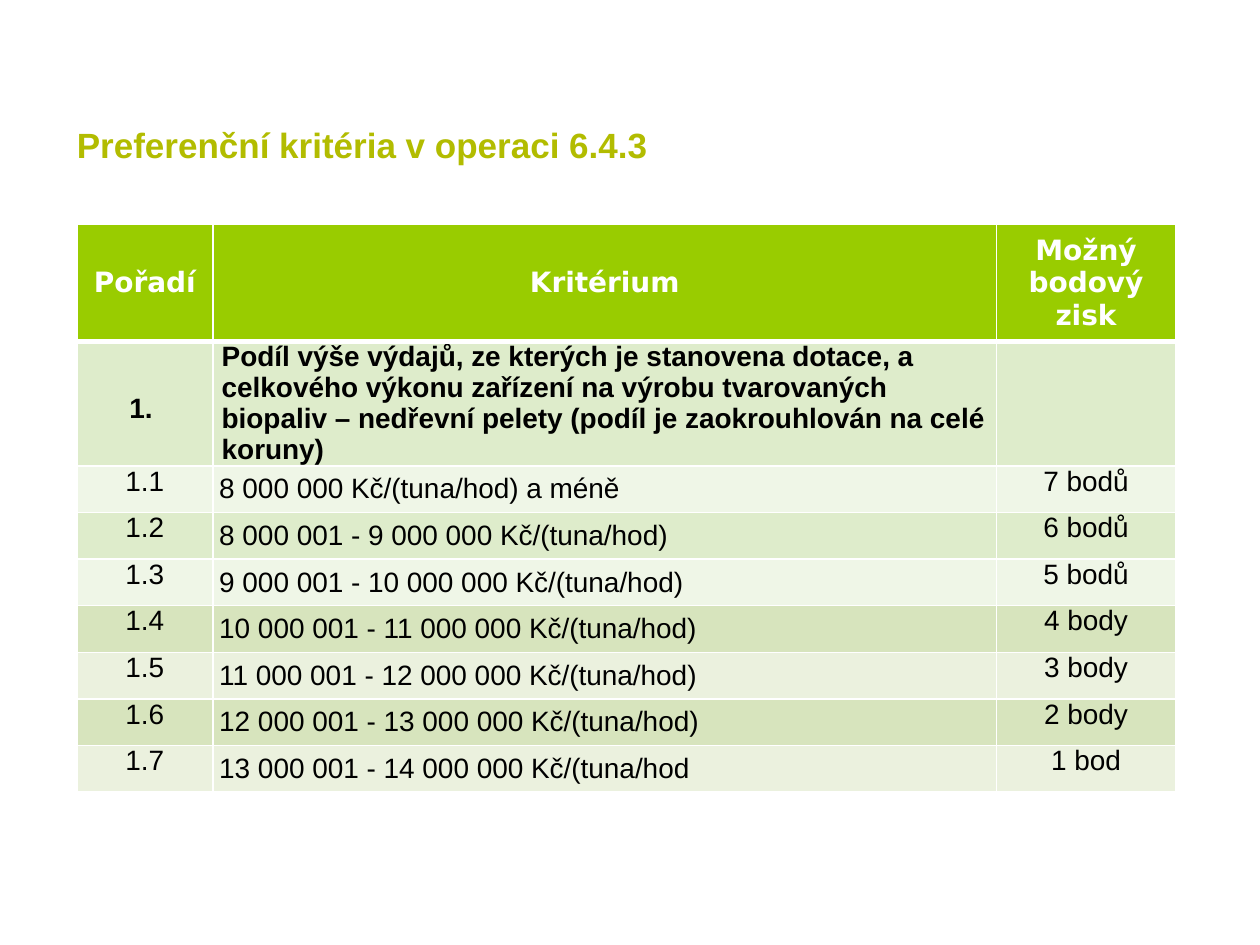
from lxml.etree import SubElement
from pptx import Presentation
from pptx.dml.color import RGBColor
from pptx.enum.text import MSO_ANCHOR as Anchor, PP_ALIGN as Align
from pptx.oxml.ns import qn
from pptx.util import Inches, Pt

COLUMN_WIDTHS = [1.08, 6.22, 1.42]
ROW_HEIGHTS = [0.93, 0.93] + [0.37] * 7
HEADINGS = ["Pořadí", "Kritérium", "Možný bodový zisk"]
CRITERION = [
    "1. ",
    "Podíl výše výdajů, ze kterých je stanovena dotace, a celkového výkonu "
    "zařízení na výrobu tvarovaných biopaliv – nedřevní pelety "
    "(podíl je zaokrouhlován na celé koruny)",
    "",
]
SCORES = [
    ["1.1", "8 000 000 Kč/(tuna/hod) a méně", "7 bodů"],
    ["1.2", "8 000 001 - 9 000 000 Kč/(tuna/hod)", "6 bodů"],
    ["1.3", "9 000 001 - 10 000 000 Kč/(tuna/hod)", "5 bodů"],
    ["1.4", "10 000 001 - 11 000 000 Kč/(tuna/hod)", "4 body"],
    ["1.5", "11 000 001 - 12 000 000 Kč/(tuna/hod)", "3 body"],
    ["1.6", "12 000 001 - 13 000 000 Kč/(tuna/hod)", "2 body"],
    ["1.7", "13 000 001 - 14 000 000 Kč/(tuna/hod", "1 bod"],
]
SCORE_FILLS = ["EFF6E7", "DEECCB", "EFF6E7", "D7E4BD", "EBF1DE", "D7E4BD", "EBF1DE"]
THIN, THICK = 0.91, 2.95


def color(hex_code):
    return RGBColor.from_string(hex_code)


def set_font(paragraph, name, size, hex_code, bold):
    font = paragraph.font
    font.name, font.size, font.bold = name, Pt(size), bold
    font.color.rgb = color(hex_code)


def add_title(slide, text):
    title = slide.shapes.title
    title.left, title.top = Inches(0.51), Inches(0.52)
    title.width, title.height = Inches(8.82), Inches(0.84)
    title.text_frame.text = text
    title.text_frame.vertical_anchor = Anchor.BOTTOM
    paragraph = title.text_frame.paragraphs[0]
    paragraph.alignment = Align.LEFT
    set_font(paragraph, "Arial", 20, "B2BC00", True)


def set_borders(cell, top, bottom):
    """Draw white borders; top and bottom are widths in points."""
    properties = cell._tc.get_or_add_tcPr()
    for side, width in (("L", THIN), ("R", THIN), ("T", top), ("B", bottom)):
        line = SubElement(properties, qn(f"a:ln{side}"), w=str(Pt(width)))
        SubElement(SubElement(line, qn("a:solidFill")), qn("a:srgbClr"), val="FFFFFF")


def fill_row(row, texts, fill, margins, font="Arial", text_color="000000",
             bold=False, top=THIN, bottom=THIN):
    """Write and format one row; margins are (side, vertical) in inches."""
    side, vertical = (Inches(margin) for margin in margins)
    for cell, text in zip(row.cells, texts):
        set_borders(cell, top, bottom)
        cell.fill.solid()
        cell.fill.fore_color.rgb = color(fill)
        cell.margin_left = cell.margin_right = side
        cell.margin_top = cell.margin_bottom = vertical
        cell.text = text
        paragraph = cell.text_frame.paragraphs[0]
        paragraph.alignment = Align.CENTER
        set_font(paragraph, font, 16, text_color, bold)


def add_criteria_table(slide):
    table = slide.shapes.add_table(
        len(ROW_HEIGHTS), len(COLUMN_WIDTHS), Inches(0.61), Inches(1.78),
        Inches(sum(COLUMN_WIDTHS)), Inches(sum(ROW_HEIGHTS))).table
    for column, width in zip(table.columns, COLUMN_WIDTHS):
        column.width = Inches(width)
    for row, height in zip(table.rows, ROW_HEIGHTS):
        row.height = Inches(height)

    heading_row, criterion_row, *score_rows = table.rows
    fill_row(heading_row, HEADINGS, "99CC00", (0.1, 0.05), font="DejaVu Sans",
             text_color="FFFFFF", bold=True, bottom=THICK)
    for cell in heading_row.cells:
        cell.vertical_anchor = Anchor.MIDDLE
        cell.text_frame.paragraphs[0].line_spacing = 1.01

    fill_row(criterion_row, CRITERION, "DEECCB", (0.07, 0), bold=True, top=THICK)
    criterion_row.cells[0].margin_top = Inches(0.41)

    for row, texts, fill in zip(score_rows, SCORES, SCORE_FILLS):
        fill_row(row, texts, fill, (0.05, 0))

    for row in (criterion_row, *score_rows):
        description = row.cells[1]
        description.vertical_anchor = Anchor.MIDDLE
        description.text_frame.paragraphs[0].alignment = (
            Align.LEFT if row is criterion_row else Align.JUSTIFY)


def main():
    presentation = Presentation()
    presentation.slide_width, presentation.slide_height = Inches(10), Inches(7.5)
    slide = presentation.slides.add_slide(presentation.slide_layouts[5])
    add_title(slide, "Preferenční kritéria v operaci 6.4.3")
    add_criteria_table(slide)
    presentation.save("out.pptx")


if __name__ == "__main__":
    main()
